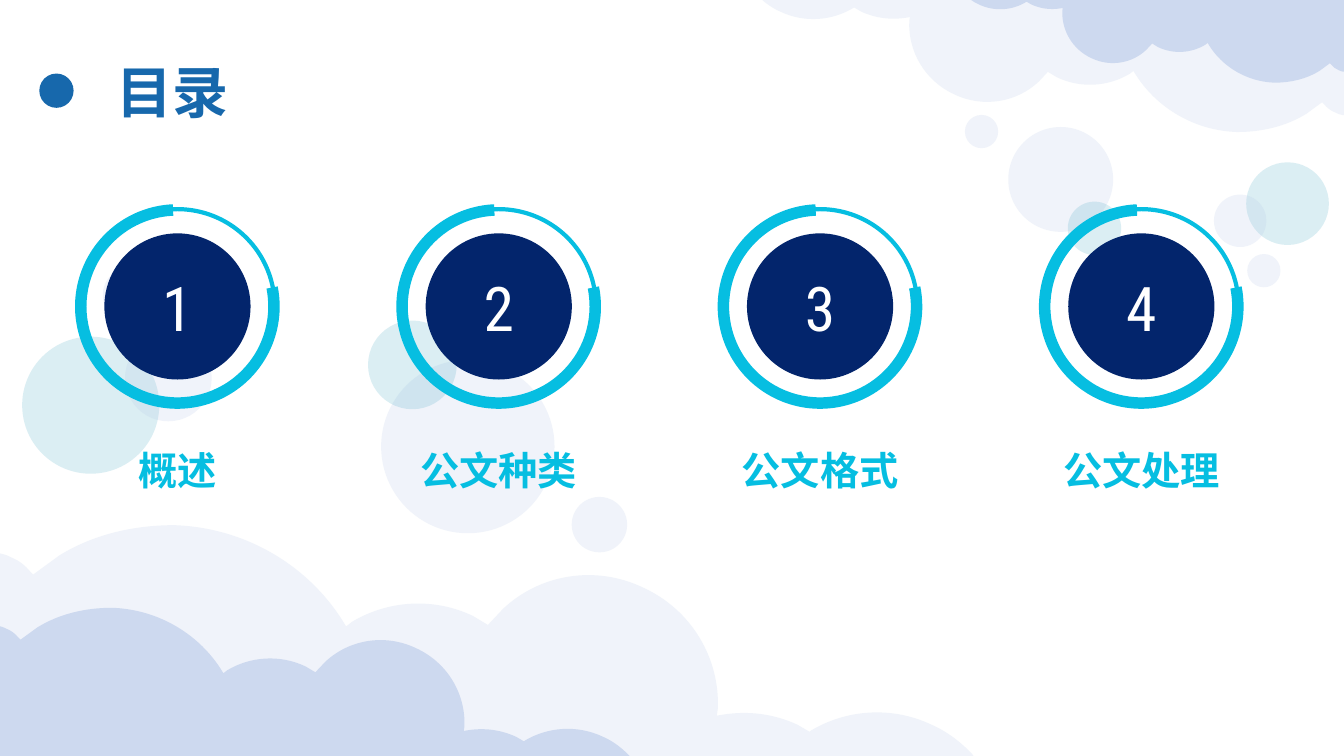
from lxml.etree import SubElement
from pptx import Presentation
from pptx.dml.color import RGBColor
from pptx.enum.shapes import MSO_SHAPE
from pptx.enum.text import MSO_ANCHOR, MSO_AUTO_SIZE, PP_ALIGN
from pptx.oxml.ns import qn
from pptx.util import Inches, Pt

BLUE = RGBColor(0x17, 0x68, 0xAC)
CYAN = RGBColor(0x06, 0xBE, 0xE1)
NAVY = RGBColor(0x03, 0x25, 0x6C)
WHITE = RGBColor(0xFF, 0xFF, 0xFF)
PALE = RGBColor(0xDA, 0xE3, 0xF3)
SKY = RGBColor(0x44, 0x72, 0xC4)
MIST = RGBColor(0xB4, 0xC7, 0xE7)
TEAL = RGBColor(0x4B, 0xAC, 0xC6)
HAN, LATIN = "Noto Sans CJK SC", "Roboto Condensed"

TITLE = "目录"
TOPICS = ["概述", "公文种类", "公文格式", "公文处理"]
LOW = {
    "turn": 0,
    "clouds": [(-0.03, 5.21, 9.7, 2.32, PALE, 40), (-0.03, 6.03, 6.29, 1.5, SKY, 20)],
    "bubbles": [
        (0.22, 3.34, 1.36, TEAL), (3.78, 3.57, 1.72, MIST),
        (1.24, 3.32, 0.86, MIST), (1.02, 2.65, 0.55, MIST),
        (5.67, 4.93, 0.55, MIST), (3.65, 3.18, 0.88, TEAL),
    ],
}
HIGH = {
    "turn": 180,
    "clouds": [(7.48, -0.09, 5.85, 1.4, PALE, 40), (9.54, -0.09, 3.79, 0.91, SKY, 20)],
    "bubbles": [
        (12.36, 1.61, 0.82, TEAL), (10, 1.26, 1.04, MIST),
        (12.04, 1.93, 0.52, MIST), (12.37, 2.52, 0.33, MIST),
        (9.57, 1.14, 0.33, MIST), (10.59, 2, 0.53, TEAL),
    ],
}
START = (1.76, 0)
OUTLINE = [
    (2.03, 0.01, 2.3, 0.07, 2.56, 0.19), (2.95, 0.37, 3.26, 0.66, 3.46, 1),
    (3.47, 1), (3.52, 0.96),
    (3.87, 0.75, 4.32, 0.71, 4.72, 0.9), (4.87, 0.99), (5.02, 0.83),
    (5.38, 0.49, 5.93, 0.39, 6.41, 0.62), (6.89, 0.84, 7.17, 1.32, 7.15, 1.82),
    (7.14, 1.89), (7.2, 1.88),
    (7.45, 1.84, 7.7, 1.87, 7.94, 1.98), (8.06, 2.05), (8.07, 2.04),
    (8.42, 1.83, 8.87, 1.79, 9.27, 1.98), (9.43, 2.05, 9.57, 2.16, 9.68, 2.28),
    (9.7, 2.32), (0, 2.32), (0, 0.28), (0.03, 0.28),
    (0.07, 0.29, 0.11, 0.3, 0.14, 0.32), (0.22, 0.35, 0.28, 0.4, 0.33, 0.46),
    (0.36, 0.49), (0.62, 0.3), (0.96, 0.09, 1.36, 0, 1.76, 0),
]
UNIT = 1000
MID_X, MID_Y, SPAN = 1.76, 3.04, 9.56
ARC, RING, DISC, LABEL = 2.03, 1.93, 1.45, 1.79


def paint(shape, color, alpha=100):
    """Fill a shape with a flat colour and no line or shadow."""
    shape.shadow.inherit = False
    shape.line.fill.background()
    shape.fill.solid()
    shape.fill.fore_color.rgb = color
    if alpha < 100:
        tone = next(shape.element.spPr.iter(qn("a:srgbClr")))
        SubElement(tone, qn("a:alpha")).set("val", str(alpha * 1000))
    return shape


def round_at(shapes, x, y, size, kind=MSO_SHAPE.OVAL):
    """Add a shape as wide as it is high."""
    return shapes.add_shape(kind, Inches(x), Inches(y), Inches(size), Inches(size))


def write(shape, text, size, color, font=HAN, bold=False,
          align=PP_ALIGN.LEFT, anchor=MSO_ANCHOR.TOP, spacing=None, grow=False):
    """Put formatted text in a shape."""
    frame = shape.text_frame
    frame.word_wrap = True
    frame.vertical_anchor = anchor
    frame.auto_size = MSO_AUTO_SIZE.SHAPE_TO_FIT_TEXT if grow else MSO_AUTO_SIZE.NONE
    para = frame.paragraphs[0]
    para.alignment = align
    para.line_spacing = spacing
    run = para.add_run()
    run.text = text
    run.font.size, run.font.bold, run.font.name = Pt(size), bold, font
    run.font.color.rgb = color
    SubElement(run.font._element, qn("a:ea")).set("typeface", font)


def add_cloud(shapes, x, y, wide, high, color, alpha, turn):
    """Add the cloud outline with its curves, fitted to a box."""
    scaled = [[round(v * UNIT) for v in part] for part in OUTLINE]
    pen = shapes.build_freeform(*(v * UNIT for v in START), scale=Inches(1) / UNIT)
    pen.add_line_segments([part[-2:] for part in scaled], close=True)
    cloud = paint(pen.convert_to_shape(), color, alpha)
    lines = list(cloud.element.spPr.iter(qn("a:lnTo")))
    for line, part in zip(lines, scaled):
        if len(part) == 6:
            curve = SubElement(line.getparent(), qn("a:cubicBezTo"))
            for across, down in zip(part[::2], part[1::2]):
                point = SubElement(curve, qn("a:pt"))
                point.set("x", str(across))
                point.set("y", str(down))
            line.getparent().replace(line, curve)
    cloud.left, cloud.top = Inches(x), Inches(y)
    cloud.width, cloud.height = Inches(wide), Inches(high)
    cloud.rotation = turn


def add_sky(shapes, layout, turn, clouds, bubbles):
    """Add a group of clouds and bubbles to the layout."""
    group = shapes.add_group_shape()
    for cloud in clouds:
        add_cloud(group.shapes, *cloud, turn)
    for x, y, size, color in bubbles:
        paint(round_at(group.shapes, x, y, size), color, 20).rotation = turn
    layout.shapes.element.append(group.element)


def add_badge(shapes, mid_x, number):
    """Add a disc with a number inside a ring."""
    badge = shapes.add_group_shape().shapes

    def center(size, kind=MSO_SHAPE.OVAL):
        """Add a round part on the middle of the badge."""
        return round_at(badge, mid_x - size / 2, MID_Y - size / 2, size, kind)

    arc = paint(center(ARC, MSO_SHAPE.BLOCK_ARC), CYAN)
    for place, value in enumerate((47.2, 214.465, 0.056)):
        arc.adjustments[place] = value
    arc.rotation = 270
    ring = center(RING)
    ring.shadow.inherit = False
    ring.fill.background()
    ring.line.color.rgb, ring.line.width = CYAN, Pt(3)
    write(paint(center(DISC), NAVY), number, 44, WHITE, font=LATIN,
          align=PP_ALIGN.CENTER, anchor=MSO_ANCHOR.MIDDLE)


def main():
    """Build the contents slide."""
    deck = Presentation()
    deck.slide_width, deck.slide_height = Inches(13.33), Inches(7.5)
    layout = deck.slide_layouts[5]
    shapes = deck.slides.add_slide(layout).shapes
    for sky in (LOW, HIGH):
        add_sky(shapes, layout, **sky)
    paint(round_at(shapes, 0.39, 0.73, 0.34), BLUE)
    title = shapes.title
    shapes.element.append(title.element)
    title.left, title.top = Inches(1.06), Inches(0.52)
    title.width, title.height = Inches(7.27), Inches(0.77)
    write(title, TITLE, 40, BLUE, bold=True, grow=True)
    mids = [MID_X + SPAN * i / (len(TOPICS) - 1) for i in range(len(TOPICS))]
    for number, mid in enumerate(mids, 1):
        add_badge(shapes, mid, str(number))
    for topic, mid in zip(TOPICS, mids):
        label = shapes.add_textbox(Inches(mid - LABEL / 2), Inches(4.64),
                                   Inches(LABEL), Inches(0.35))
        write(label, topic, 28, CYAN, bold=True, align=PP_ALIGN.CENTER,
              spacing=Pt(15), grow=True)
    deck.save("out.pptx")


if __name__ == "__main__":
    main()
